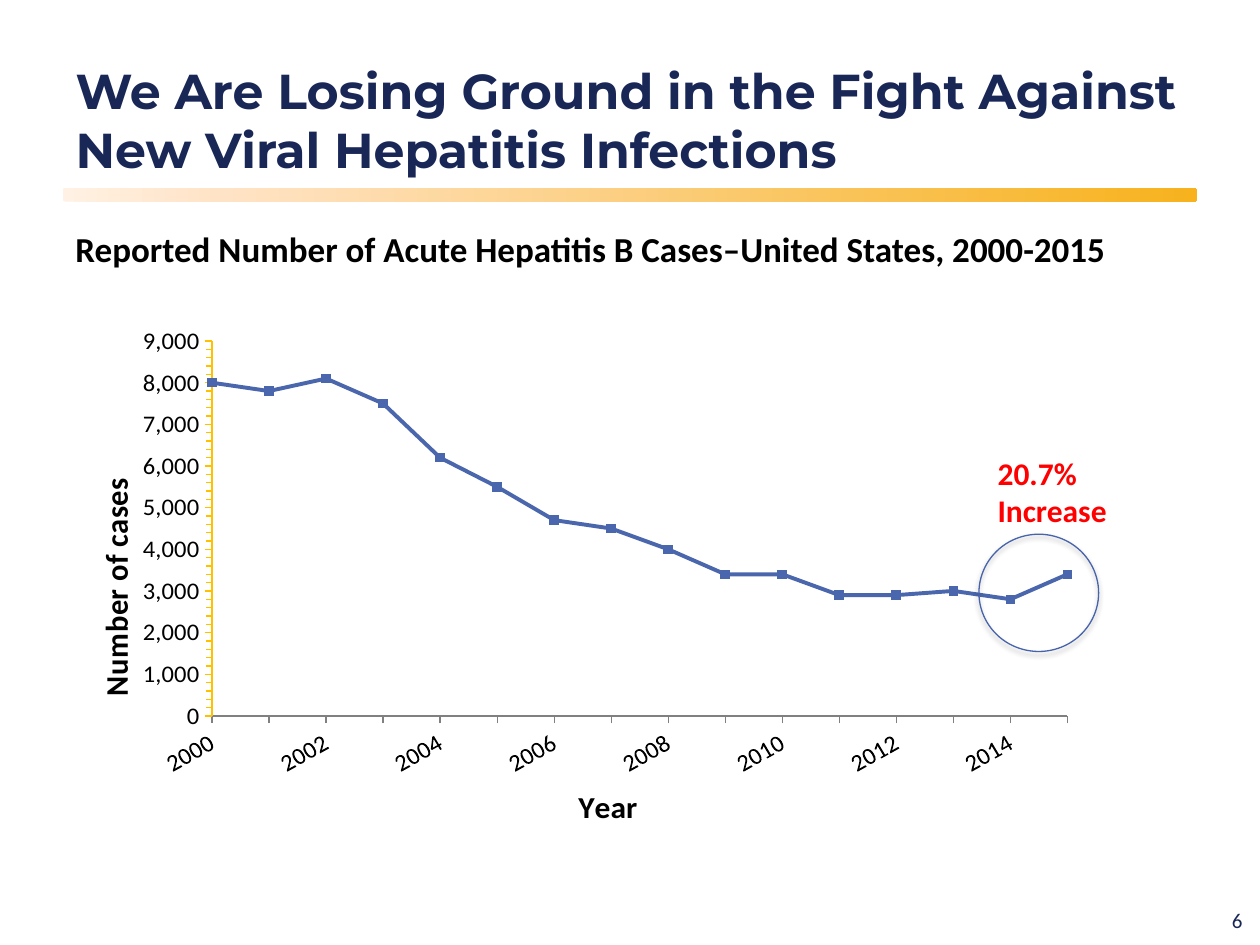
from copy import deepcopy

from lxml import etree
from pptx import Presentation
from pptx import util as u
from pptx.chart.data import CategoryChartData
from pptx.dml.color import RGBColor
from pptx.enum import chart as kinds, shapes, text
from pptx.oxml import parse_xml
from pptx.oxml.ns import nsdecls, qn

NAVY, BLUE, BLACK, RED = "192757", "4A66AC", "000000", "FF0000"
AMBER, GRAY = "FFC000", "808080"
CASES = [8000, 7800, 8100, 7500, 6200, 5500, 4700, 4500,
         4000, 3400, 3400, 2900, 2900, 3000, 2800, 3400]


def color(value):
    return RGBColor.from_string(value)


def area(left, top, width, height):
    return [u.Pt(length) for length in (left, top, width, height)]


def format_font(font, size, fill=BLACK, bold=False, name="Calibri"):
    font.name, font.size, font.bold = name, u.Pt(size), bold
    font.color.rgb = color(fill)


def write(box, words, align=text.PP_ALIGN.LEFT, anchor=text.MSO_ANCHOR.TOP,
          wrap=True, **font):
    frame = box.text_frame
    frame.auto_size = text.MSO_AUTO_SIZE.NONE
    frame.word_wrap, frame.vertical_anchor = wrap, anchor
    frame.text = words
    for para in frame.paragraphs:
        para.alignment = align
        for span in para.runs:
            format_font(span.font, **font)


def add_title(page, words):
    title = page.shapes.title
    title.left, title.top, title.width, title.height = area(36, 15.5, 648, 90)
    write(title, words, anchor=text.MSO_ANCHOR.BOTTOM,
          size=28, fill=NAVY, bold=True, name="Montserrat")


def add_rule(page):
    rule = page.shapes.add_shape(shapes.MSO_SHAPE.ROUNDED_RECTANGLE,
                                 *area(36, 107.3, 648, 7.9))
    rule.shadow.inherit = False
    rule.line.fill.background()
    rule.fill.gradient()
    rule.fill.gradient_angle = 0
    first = rule.fill.gradient_stops[0]._gs
    first.addnext(deepcopy(first))
    stops = [(0, "FFF1E3"), (0.14, "FFE3C6"), (1, "F7B21D")]
    for stop, (position, value) in zip(rule.fill.gradient_stops, stops):
        stop.position = position
        stop.color.rgb = color(value)


def place(parent, index, inner=False, **layout):
    """Give a chart part a manual layout, as shares of the chart."""
    for old in parent.findall(qn("c:layout")):
        parent.remove(old)
    target = '<c:layoutTarget val="inner"/>' if inner else ""
    modes = "".join(f'<c:{side}Mode val="edge"/>' for side in "xy")
    sizes = "".join(f'<c:{key} val="{val}"/>' for key, val in layout.items())
    parent.insert(index, parse_xml(
        f'<c:layout {nsdecls("c")}><c:manualLayout>{target}{modes}{sizes}'
        "</c:manualLayout></c:layout>"))


def format_axis(axis, words, line, x, y):
    axis.has_major_gridlines = False
    axis.major_tick_mark = kinds.XL_TICK_MARK.OUTSIDE
    axis.format.line.color.rgb = color(line)
    axis.format.line.width = u.Pt(0.75)
    format_font(axis.tick_labels.font, 14)
    frame = axis.axis_title.text_frame
    frame.text = words
    format_font(frame.paragraphs[0].runs[0].font, 18, bold=True)
    place(axis.axis_title._element, 1, x=x, y=y)
    return frame


def add_chart(page):
    data = CategoryChartData(number_format="#,##0")
    data.categories = [str(year) for year in range(2000, 2016)]
    data.add_series("Series 1", CASES)
    chart = page.shapes.add_chart(kinds.XL_CHART_TYPE.LINE_MARKERS,
                                  *area(44.6, 186.5, 589, 290.9), data).chart
    chart.has_legend = chart.has_title = False
    format_font(chart.font, 18)
    place(chart._chartSpace.chart.plotArea, 0, inner=True,
          x=0.13, y=0.03, w=0.83, h=0.76)

    # Line and markers
    chart.plots[0].vary_by_categories = False
    series = chart.plots[0].series[0]
    series.smooth = False
    series.format.line.color.rgb = color(BLUE)
    series.format.line.width = u.Pt(2.25)
    series.marker.style = kinds.XL_MARKER_STYLE.SQUARE
    series.marker.size = 5
    series.marker.format.fill.solid()
    series.marker.format.fill.fore_color.rgb = color(BLUE)
    series.marker.format.line.color.rgb = color(BLUE)

    # Year axis: every second label, slanted
    years = chart.category_axis
    format_axis(years, "Year", GRAY, 0.48, 0.92)
    node = years._element
    node.find(qn("c:txPr")).find(qn("a:bodyPr")).set("rot", "-1800000")
    skip = etree.Element(qn("c:tickLblSkip"), val="2")
    node.find(qn("c:noMultiLvlLbl")).addprevious(skip)

    # Case axis: starts on the first year, title clear of the labels
    cases = chart.value_axis
    frame = format_axis(cases, "Number of cases", AMBER, 0.01, 0.31)
    frame._txBody.bodyPr.set("rot", "-5400000")
    frame._txBody.bodyPr.set("vert", "horz")
    cases.minimum_scale, cases.maximum_scale = 0, 9000
    cases.major_unit, cases.minor_unit = 1000, 200
    cases.minor_tick_mark = kinds.XL_TICK_MARK.OUTSIDE
    cases.tick_labels.number_format = "#,##0"
    cases.tick_labels.number_format_is_linked = False
    node = cases._element
    for old in node.findall(qn("c:crossBetween")):
        node.remove(old)
    between = etree.Element(qn("c:crossBetween"), val="midCat")
    node.find(qn("c:crosses")).addnext(between)


def add_callout(page):
    group = page.shapes.add_group_shape()
    ring = group.shapes.add_shape(shapes.MSO_SHAPE.OVAL,
                                  *area(559.4, 305.3, 68.4, 67))
    ring.fill.background()
    ring.line.color.rgb = color("4663AB")
    ring.line.width = u.Pt(0.75)
    ring._element.spPr.append(parse_xml(
        f'<a:effectLst {nsdecls("a")}><a:outerShdw blurRad="{u.Pt(3.1)}" '
        f'dist="{u.Pt(1.8)}" dir="5400000" rotWithShape="0">'
        f'<a:srgbClr val="{BLACK}"><a:alpha val="35000"/></a:srgbClr>'
        "</a:outerShdw></a:effectLst>"))
    label = group.shapes.add_textbox(*area(563, 255.6, 77, 51))
    write(label, "20.7%\nIncrease", wrap=False, size=18, fill=RED, bold=True)


def main():
    deck = Presentation()
    deck.slide_width, deck.slide_height = u.Pt(720), u.Pt(540)
    page = deck.slides.add_slide(deck.slide_layouts[5])

    # Heading
    add_rule(page)
    add_title(page, "We Are Losing Ground in the Fight Against "
                    "New Viral Hepatitis Infections")

    # Chart with its heading and callout
    add_chart(page)
    add_callout(page)
    heading = page.shapes.add_textbox(*area(36, 126.4, 612.7, 31.7))
    write(heading, "Reported Number of Acute Hepatitis B Cases–United States, "
                   "2000-2015", size=20, bold=True)

    # Page number
    number = page.shapes.add_textbox(*area(692.6, 514.8, 28.8, 21.6))
    write(number, "6", align=text.PP_ALIGN.CENTER,
          anchor=text.MSO_ANCHOR.BOTTOM, size=12, fill=NAVY)
    deck.save("out.pptx")


if __name__ == "__main__":
    main()
